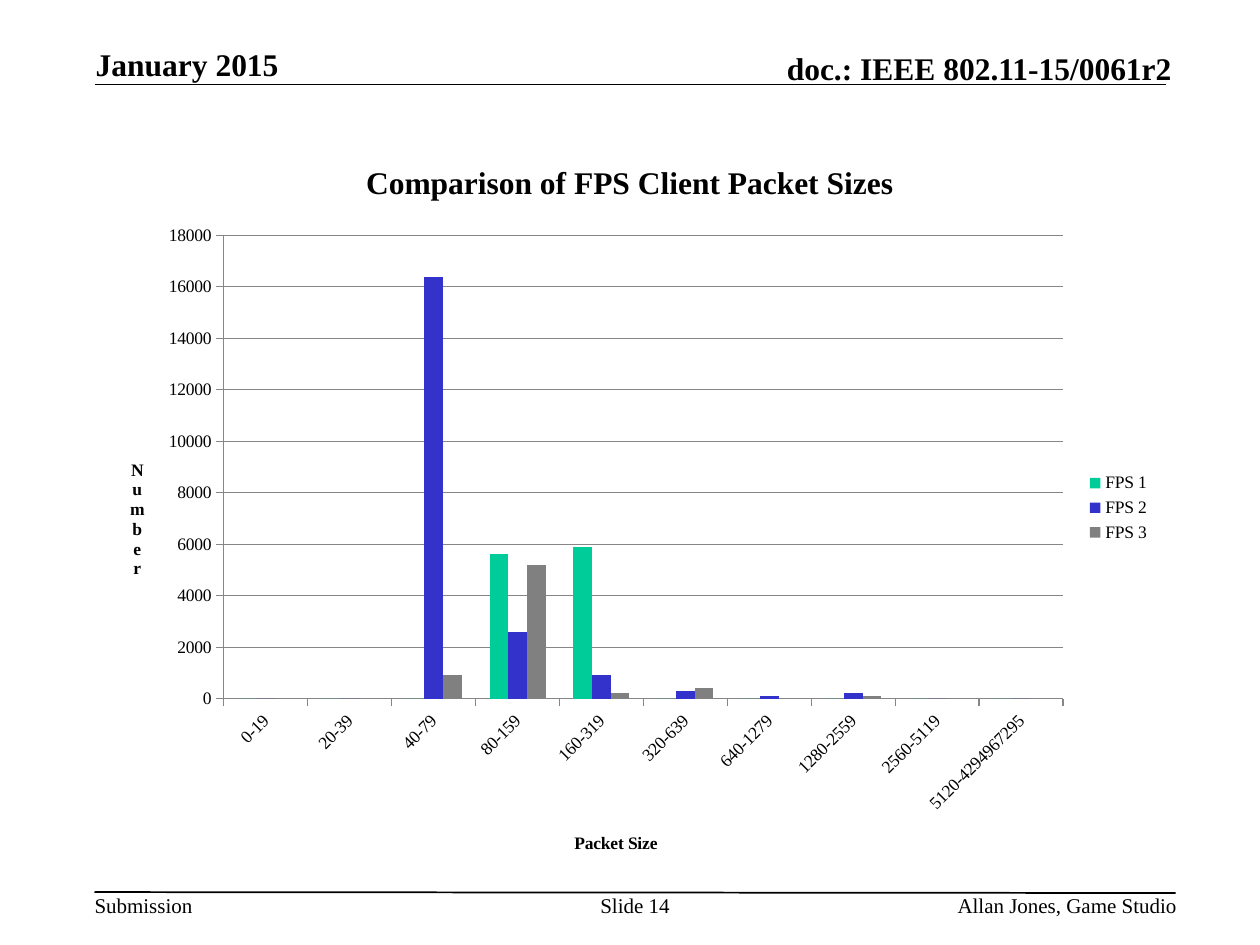
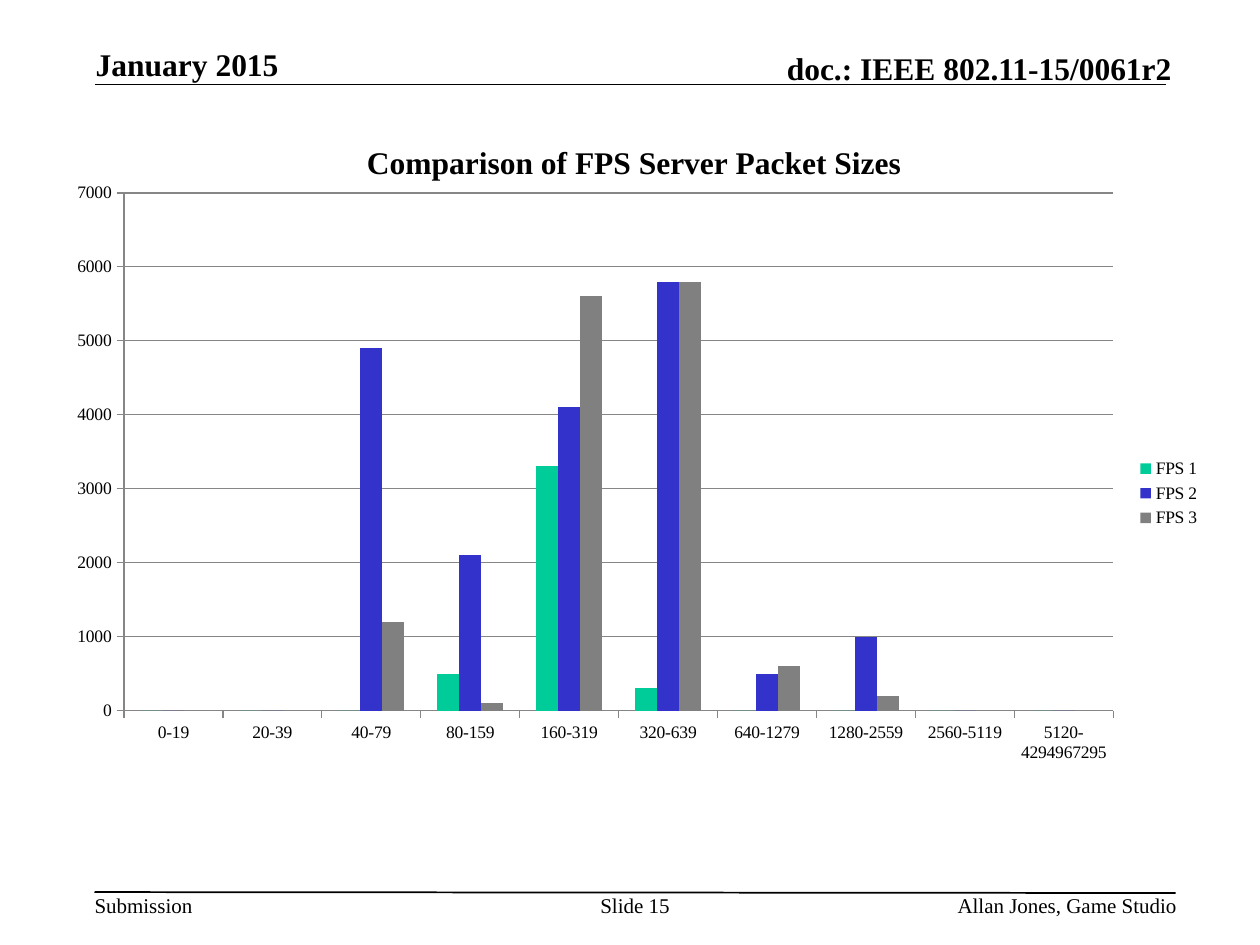
from lxml.etree import SubElement
from pptx import Presentation
from pptx.chart.data import CategoryChartData
from pptx.dml.color import RGBColor
from pptx.enum.chart import XL_CHART_TYPE, XL_LEGEND_POSITION, XL_TICK_MARK
from pptx.enum.shapes import MSO_CONNECTOR
from pptx.enum.text import MSO_ANCHOR, PP_ALIGN
from pptx.oxml import parse_xml
from pptx.oxml.ns import nsdecls, qn
from pptx.util import Inches, Pt

# Shared look
FONT = "Times New Roman"
INK, GRID_GRAY = "000000", "868686"
SERIES_COLORS = ["00CC99", "3333CC", "808080"]
paint = RGBColor.from_string

deck = Presentation()
deck.slide_width, deck.slide_height = Inches(10), Inches(7.5)
COLUMN, ROW = deck.slide_width / 100, deck.slide_height / 100


def on_grid(*cells):
    """Turn alternating columns and rows into slide lengths."""
    return [round(cell * (ROW if i % 2 else COLUMN)) for i, cell in enumerate(cells)]


def put_text(frame, text, size=12, bold=False, align=PP_ALIGN.LEFT):
    paragraph = frame.paragraphs[0]
    paragraph.alignment = align
    run = paragraph.add_run()
    run.text = text
    run.font.name, run.font.size, run.font.bold = FONT, Pt(size), bold
    run.font.color.rgb = paint(INK)


# Header and footer: text, area, anchor, wrap, format
heading = {"size": 18, "bold": True}
bands = [
    ("January 2015", (7.6, 4.8, 20.5, 4), MSO_ANCHOR.BOTTOM, True, heading),
    ("doc.: IEEE 802.11-15/0061r2", (54.7, 5.2, 38.3, 4), MSO_ANCHOR.BOTTOM, True,
     heading | {"align": PP_ALIGN.RIGHT}),
    ("Submission", (7.5, 94.4, 7.8, 2.67), MSO_ANCHOR.TOP, False, {}),
    ("Slide {number}", (47.5, 94.4, 5.8, 5.33), MSO_ANCHOR.TOP, True,
     {"align": PP_ALIGN.CENTER}),
    ("Allan Jones, Game Studio", (58.6, 94.4, 34.8, 2.67), MSO_ANCHOR.TOP, True,
     {"align": PP_ALIGN.RIGHT}),
]
rules = [(7.5, 8.93, 92.5, 8.93), (7.5, 94.4, 93.3, 94.5)]

# Packet counts per size range
size_ranges = ["0-19", "20-39", "40-79", "80-159", "160-319", "320-639",
               "640-1279", "1280-2559", "2560-5119", "5120-4294967295"]
comparisons = [
    {"number": 14, "side": "Client", "area": (8.3, 14.4, 84, 78.67),
     "top": 18000, "step": 2000, "axis_titles": ("Packet Size", "Number"),
     "label_turn": "-2700000", "plot": None,
     "counts": [[0, 0, 0, 5600, 5900, 0, 0, 0, 0, 0],
                [0, 0, 16400, 2600, 900, 300, 100, 200, 0, 0],
                [0, 0, 900, 5200, 200, 400, 0, 100, 0, 0]]},
    {"number": 15, "side": "Server", "area": (5, 12.27, 91.3, 79.87),
     "top": 7000, "step": 1000, "axis_titles": None,
     "label_turn": "0", "plot": {"x": 0.053, "y": 0.102, "w": 0.86, "h": 0.686},
     "counts": [[0, 0, 0, 500, 3300, 300, 0, 0, 0, 0],
                [0, 0, 4900, 2100, 4100, 5800, 500, 1000, 0, 0],
                [0, 0, 1200, 100, 5600, 5800, 600, 200, 0, 0]]},
]

for comparison in comparisons:
    slide = deck.slides.add_slide(deck.slide_layouts[6])

    # Rules and band text
    for ends in rules:
        rule = slide.shapes.add_connector(MSO_CONNECTOR.STRAIGHT, *on_grid(*ends))
        rule.line.color.rgb, rule.line.width = paint(INK), Pt(1)
        SubElement(rule._element.spPr, qn("a:effectLst"))
    for text, area, anchor, wrap, style in bands:
        frame = slide.shapes.add_textbox(*on_grid(*area)).text_frame
        frame.margin_left = frame.margin_right = 0
        frame.margin_top = frame.margin_bottom = 0
        frame.word_wrap, frame.vertical_anchor = wrap, anchor
        put_text(frame, text.format(number=comparison["number"]), **style)

    # Packet size chart
    packets = CategoryChartData(number_format="General")
    packets.categories = size_ranges
    for game, counts in enumerate(comparison["counts"], start=1):
        packets.add_series(f"FPS {game}", counts)
    chart = slide.shapes.add_chart(XL_CHART_TYPE.COLUMN_CLUSTERED,
                                   *on_grid(*comparison["area"]), packets).chart
    chart.font.name, chart.font.size = FONT, Pt(10)
    chart.font.color.rgb = paint(INK)
    put_text(chart.chart_title.text_frame,
             f"Comparison of FPS {comparison['side']} Packet Sizes ",
             align=PP_ALIGN.CENTER, **heading)
    chart.has_legend = True
    chart.legend.position = XL_LEGEND_POSITION.RIGHT
    chart.legend.include_in_layout = False

    bars = chart.plots[0]
    bars.gap_width, bars.overlap, bars.vary_by_categories = 150, 0, False
    for game, color in zip(bars.series, SERIES_COLORS):
        game.format.fill.solid()
        game.format.fill.fore_color.rgb = paint(color)

    # Axes
    sizes, numbers = chart.category_axis, chart.value_axis
    numbers.minimum_scale, numbers.maximum_scale = 0, comparison["top"]
    numbers.major_unit = comparison["step"]
    numbers.has_major_gridlines = True
    for part in (sizes, numbers, numbers.major_gridlines):
        part.format.line.color.rgb, part.format.line.width = paint(GRID_GRAY), Pt(0.75)
    for axis in (sizes, numbers):
        axis.major_tick_mark, axis.minor_tick_mark = XL_TICK_MARK.OUTSIDE, XL_TICK_MARK.NONE
        axis.tick_labels.font.size = Pt(10)
    sizes._element.find(qn("c:txPr")).find(qn("a:bodyPr")).set("rot", comparison["label_turn"])
    if comparison["axis_titles"]:
        for axis, title in zip((sizes, numbers), comparison["axis_titles"]):
            put_text(axis.axis_title.text_frame, title, size=10, bold=True,
                     align=PP_ALIGN.CENTER)
        stacked = numbers.axis_title.text_frame._txBody.find(qn("a:bodyPr"))
        stacked.set("rot", "0")
        stacked.set("vert", "wordArtVert")

    # Fixed plot area
    if comparison["plot"]:
        shares = "".join(f'<c:{key} val="{share}"/>' for key, share in comparison["plot"].items())
        plot_area = chart._chartSpace.chart.plotArea
        for automatic in plot_area.findall(qn("c:layout")):
            plot_area.remove(automatic)
        plot_area.insert(0, parse_xml(
            f'<c:layout {nsdecls("c")}><c:manualLayout><c:layoutTarget val="inner"/>'
            f'<c:xMode val="edge"/><c:yMode val="edge"/>{shares}</c:manualLayout></c:layout>'))

deck.save("out.pptx")
